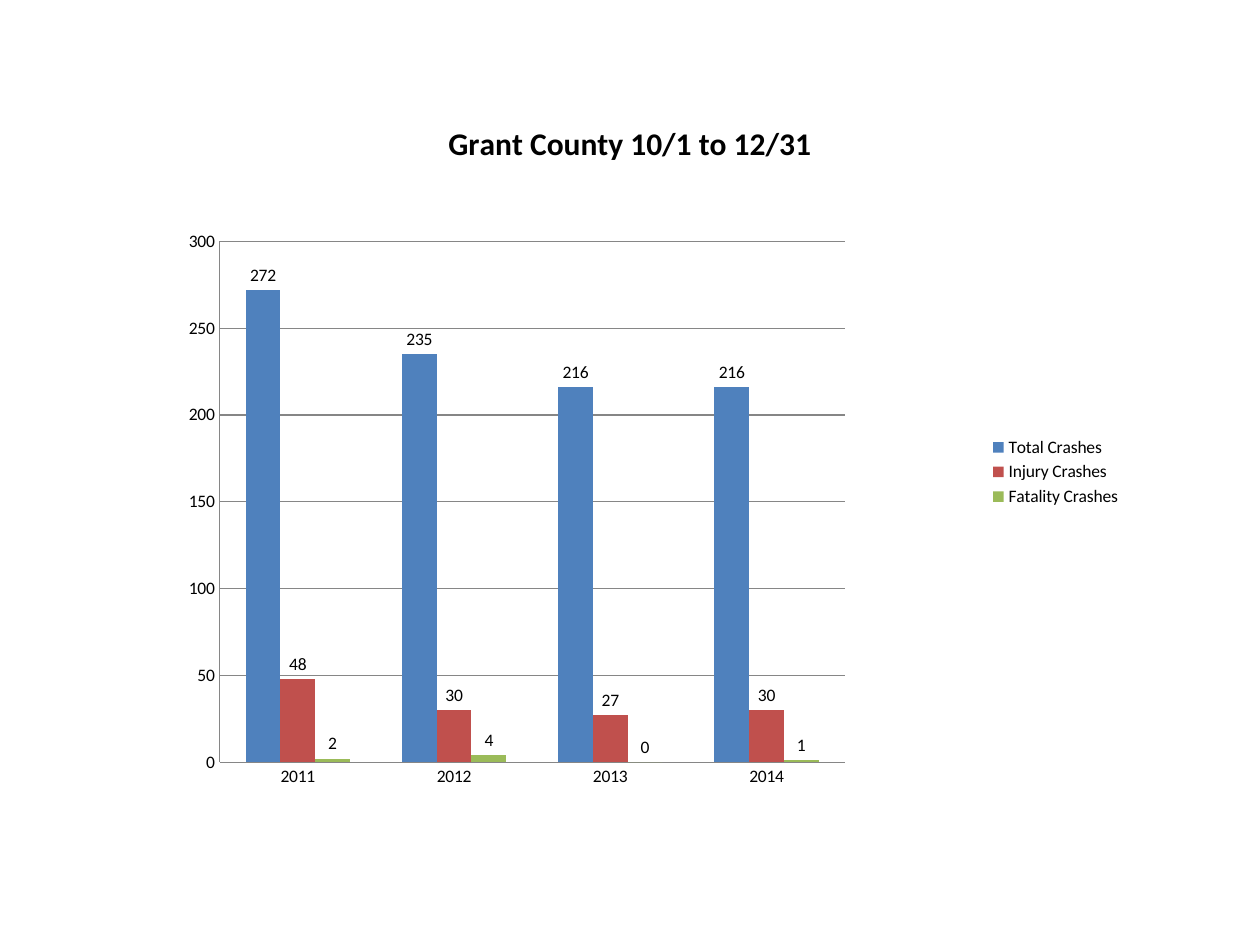
from lxml import etree
from pptx import Presentation
from pptx import util as u
from pptx.chart.data import CategoryChartData
from pptx.dml.color import RGBColor
from pptx.enum import chart as ch
from pptx.oxml import parse_xml
from pptx.oxml.ns import nsdecls, qn

PX = 914400 // 126  # EMU per px
COLORS = {
    "text": "000000",
    "grid": "868686",
    "total": "4F81BD",
    "injury": "C0504D",
    "fatality": "9BBB59",
}
YEARS = ["2011", "2012", "2013", "2014"]
CRASHES = [
    ("Total Crashes", "total", (272, 235, 216, 216)),
    ("Injury Crashes", "injury", (48, 30, 27, 30)),
    ("Fatality Crashes", "fatality", (2, 4, 0, 1)),
]


def rgb(name):
    return RGBColor.from_string(COLORS[name])


class Deck:
    """Holds the style and the current slide."""

    font = "Calibri"

    def __init__(self, width, height):
        self.prs = Presentation()
        self.prs.slide_width = u.Emu(width * PX)
        self.prs.slide_height = u.Emu(height * PX)
        self.s = self.prs.slides.add_slide(self.prs.slide_layouts[6])

    def style(self, font, size, bold=False):
        font.name, font.size, font.bold = self.font, u.Pt(size), bold
        font.color.rgb = rgb("text")

    def axis(self, axis, grid=False):
        axis.major_tick_mark = axis.minor_tick_mark = ch.XL_TICK_MARK.NONE
        axis.has_major_gridlines = grid
        lines = [axis.format.line]
        if grid:
            lines.append(axis.major_gridlines.format.line)
        for line in lines:
            line.color.rgb = rgb("grid")
            line.width = u.Pt(0.75)

    def plot_area(self, chart, x, y, w, h):
        """Fix the inner plot area, in fractions of the chart."""
        area = chart._chartSpace.chart.plotArea
        for old in area.findall(qn("c:layout")):
            area.remove(old)
        layout = parse_xml(f"<c:layout {nsdecls('c')}><c:manualLayout/></c:layout>")
        settings = [("layoutTarget", "inner"), ("xMode", "edge"), ("yMode", "edge"),
                    ("x", x), ("y", y), ("w", w), ("h", h)]
        for tag, val in settings:
            etree.SubElement(layout[0], qn(f"c:{tag}")).set("val", str(val))
        area.insert(0, layout)

    def column_chart(self, title, cats, series, x, y, w, h, plot):
        data = CategoryChartData()
        data.categories = cats
        for name, _, vals in series:
            data.add_series(name, vals)
        box = [u.Emu(v * PX) for v in (x, y, w, h)]
        chart = self.s.shapes.add_chart(
            ch.XL_CHART_TYPE.COLUMN_CLUSTERED, *box, data).chart
        self.style(chart.font, 10)

        # Title and legend
        chart.has_title = True
        tf = chart.chart_title.text_frame
        tf.text = title
        self.style(tf.paragraphs[0].runs[0].font, 18, bold=True)
        chart.chart_title.include_in_layout = False
        chart.has_legend = True
        chart.legend.position = ch.XL_LEGEND_POSITION.RIGHT
        chart.legend.include_in_layout = False

        # Axes
        self.axis(chart.category_axis)
        self.axis(chart.value_axis, grid=True)
        chart.value_axis.minimum_scale = 0
        chart.value_axis.maximum_scale = 300
        chart.value_axis.major_unit = 50

        # Columns and their labels
        bars = chart.plots[0]
        bars.gap_width, bars.overlap = 150, 0
        bars.vary_by_categories = False
        for ser, (_, color, _) in zip(bars.series, series):
            ser.format.fill.solid()
            ser.format.fill.fore_color.rgb = rgb(color)
            ser.data_labels.show_value = True
            ser.data_labels.position = ch.XL_LABEL_POSITION.OUTSIDE_END
            self.style(ser.data_labels.font, 10)
        self.plot_area(chart, *plot)


def main():
    deck = Deck(1260, 945)
    deck.column_chart("Grant County 10/1 to 12/31", YEARS, CRASHES,
                      126, 94, 1008, 756, plot=(0.093, 0.195, 0.62, 0.689))
    deck.prs.save("out.pptx")


if __name__ == "__main__":
    main()
